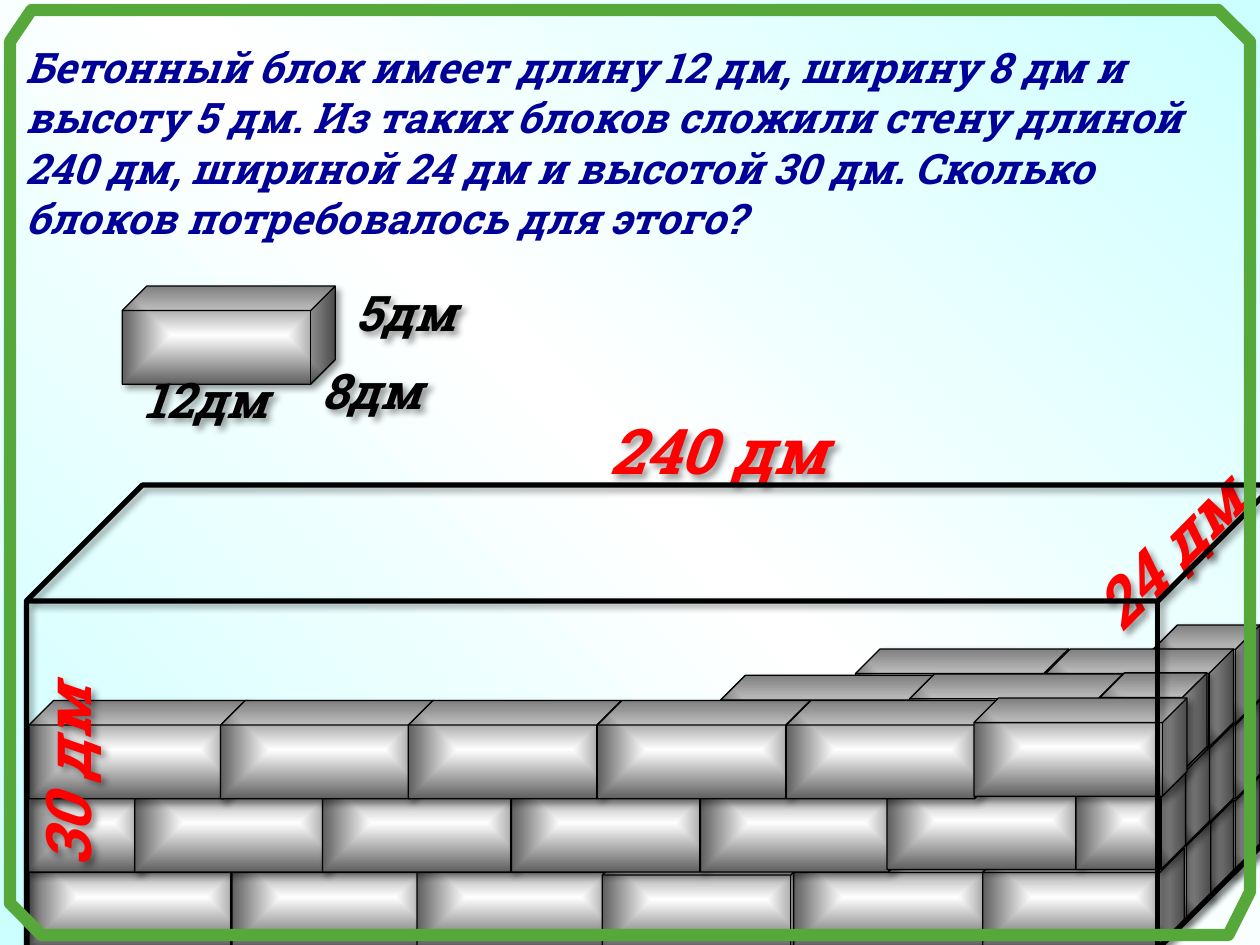
from pptx import Presentation
from pptx.dml.color import RGBColor
from pptx.enum.shapes import MSO_SHAPE
from pptx.enum.text import MSO_ANCHOR, MSO_AUTO_SIZE as AUTO_SIZE, PP_ALIGN
from pptx.oxml import parse_xml
from pptx.oxml.ns import nsdecls, qn
from pptx.util import Inches, Pt

COLORS = {
    "sky": "CCFFFF", "white": "FFFFFF", "concrete": "5F5F5F", "black": "000000",
    "problem": "000099", "wall": "FF0000", "frame": "55A839",
}
FONT = "Roboto Slab"
BLOCK_LENGTH, BLOCK_END, BLOCK_HEIGHT = 1.69, 0.85, 0.78

PROBLEM = ("Бетонный блок имеет длину 12 дм, ширину 8 дм и высоту 5 дм. "
           "Из таких блоков сложили стену длиной 240 дм, шириной 24 дм "
           "и высотой 30 дм. Сколько блоков потребовалось для этого?")

# Blocks as (left, top, length), from the back of the wall to the front
SIDE_BLOCKS = [(left, top, BLOCK_END) for left, top in (
    (9.15, 6.16), (9.15, 5.56), (9.15, 4.96),
    (8.94, 6.35), (8.94, 5.75), (8.76, 6.52), (8.75, 5.93))]
BACK_BLOCKS = [
    (6.79, 5.15, BLOCK_LENGTH), (5.72, 5.36, BLOCK_LENGTH), (8.3, 5.15, 1.49),
    (7.22, 5.35, BLOCK_LENGTH), (8.73, 5.34, BLOCK_END)]


def front_row(first, lefts, top, last):
    """Whole blocks between a first and a last block of their own size."""
    return [first, *((left, top, BLOCK_LENGTH) for left in lefts), last]


FRONT_BLOCKS = [
    *front_row((0.23, 6.73, 1.8), (1.84, 3.31), 6.73, (4.78, 6.75, BLOCK_LENGTH)),
    (6.3, 6.73, BLOCK_LENGTH), (7.8, 6.73, 1.6),
    *front_row((0.21, 6.14, 1.08), (1.07, 2.56, 4.06, 5.56), 6.14,
               (7.04, 6.12, BLOCK_LENGTH)),
    (8.54, 6.12, 0.87),
    *front_row((0.23, 5.56, 1.74), (1.75, 3.24, 4.74, 6.24), 5.56,
               (7.73, 5.54, BLOCK_LENGTH)),
]

# Labels as (text, left, top, width, height, size, colour, rotation)
BLOCK_LABELS = [
    ("12дм", 1.05, 2.88, 1.33, 0.57, 28, "black", 0),
    ("5дм", 2.72, 2.19, 1.07, 0.57, 28, "black", 0),
    ("8дм", 2.45, 2.81, 1.07, 0.57, 28, "black", 0)]
WALL_LABELS = [
    ("240 дм", 4.74, 3.22, 2.15, 0.71, 36, "wall", 0),
    ("30 дм", -0.38, 5.72, 1.82, 0.71, 36, "wall", 270),
    ("24 дм", 8.43, 3.96, 1.82, 0.71, 36, "wall", 314.6)]

FRAME_CORNERS = [(0.08, 0.33), (0.08, 7.17), (0.33, 7.42), (9.75, 7.42),
                 (9.92, 7.08), (9.92, 0.33), (9.67, 0.08), (0.25, 0.08)]


def rgb(name):
    return RGBColor.from_string(COLORS[name])


def gradient(stops, direction):
    stop_xml = "".join(
        f'<a:gs pos="{percent * 1000}"><a:srgbClr val="{COLORS[name]}"/></a:gs>'
        for percent, name in stops)
    return (f'<a:gradFill {nsdecls("a")} rotWithShape="1">'
            f'<a:gsLst>{stop_xml}</a:gsLst>{direction}</a:gradFill>')


def set_background(slide):
    fill = gradient([(0, "sky"), (50, "white"), (100, "sky")],
                    f'<a:lin ang="{315 * 60000}" scaled="0"/>')
    slide.element.cSld.insert(0, parse_xml(
        f'<p:bg {nsdecls("p")}><p:bgPr>{fill}'
        f'<a:effectLst {nsdecls("a")}/></p:bgPr></p:bg>'))


def add_shadow(shape):
    shape.shadow.inherit = False
    effects = shape.element.spPr.find(qn("a:effectLst"))
    effects.append(parse_xml(
        f'<a:outerShdw {nsdecls("a")} blurRad="{Pt(4)}" dist="{Pt(3)}" '
        f'dir="{45 * 60000}" algn="tl" rotWithShape="0">'
        f'<a:srgbClr val="{COLORS["black"]}"><a:alpha val="40000"/></a:srgbClr>'
        '</a:outerShdw>'))


def add_cuboid(slide, left, top, width, height, line_width):
    cuboid = slide.shapes.add_shape(
        MSO_SHAPE.CUBE, Inches(left), Inches(top), Inches(width), Inches(height))
    cuboid.adjustments[0] = 0.25
    cuboid.fill.background()
    cuboid.line.color.rgb = rgb("black")
    cuboid.line.width = Pt(line_width)
    add_shadow(cuboid)
    return cuboid


def add_block(slide, left, top, length):
    block = add_cuboid(slide, left, top, length, BLOCK_HEIGHT, 0.75)
    properties = block.element.spPr
    glow = gradient(
        [(0, "white"), (100, "concrete")],
        '<a:path path="rect">'
        '<a:fillToRect l="50000" t="50000" r="50000" b="50000"/></a:path>')
    properties.replace(properties.find(qn("a:noFill")), parse_xml(glow))


def write(frame, text, size, color):
    frame.text = text
    frame.auto_size = AUTO_SIZE.SHAPE_TO_FIT_TEXT
    frame.vertical_anchor = MSO_ANCHOR.TOP
    paragraph = frame.paragraphs[0]
    paragraph.alignment = PP_ALIGN.LEFT
    for run in paragraph.runs:
        run.font.name = FONT
        run.font.size = Pt(size)
        run.font.bold = run.font.italic = True
        run.font.color.rgb = rgb(color)


def set_problem(slide):
    title = slide.shapes.title
    title.left, title.top = Inches(0.1), Inches(0.28)
    title.width, title.height = Inches(9.75), Inches(1.72)
    title.text_frame.word_wrap = True
    write(title.text_frame, PROBLEM, 24, "problem")


def add_label(slide, text, left, top, width, height, size, color, rotation):
    label = slide.shapes.add_textbox(
        Inches(left), Inches(top), Inches(width), Inches(height))
    label.rotation = rotation
    label.text_frame.word_wrap = False
    write(label.text_frame, text, size, color)
    add_shadow(label)


def add_frame(slide):
    corners = [(Inches(x), Inches(y)) for x, y in FRAME_CORNERS]
    builder = slide.shapes.build_freeform(*corners[0])
    builder.add_line_segments(corners[1:], close=True)
    frame = builder.convert_to_shape()
    frame.fill.background()
    frame.line.color.rgb = rgb("frame")
    frame.line.width = Pt(7)
    frame.shadow.inherit = False


def main():
    deck = Presentation()
    deck.slide_width, deck.slide_height = Inches(10), Inches(7.5)
    slide = deck.slides.add_slide(deck.slide_layouts[5])
    set_background(slide)
    set_problem(slide)
    for block in SIDE_BLOCKS + BACK_BLOCKS + FRONT_BLOCKS:
        add_block(slide, *block)
    add_block(slide, 0.97, 2.27, BLOCK_LENGTH)
    for label in BLOCK_LABELS + WALL_LABELS:
        add_label(slide, *label)
    add_cuboid(slide, 0.21, 3.85, 9.9, 3.68, 3)
    add_frame(slide)
    deck.save("out.pptx")


if __name__ == "__main__":
    main()
